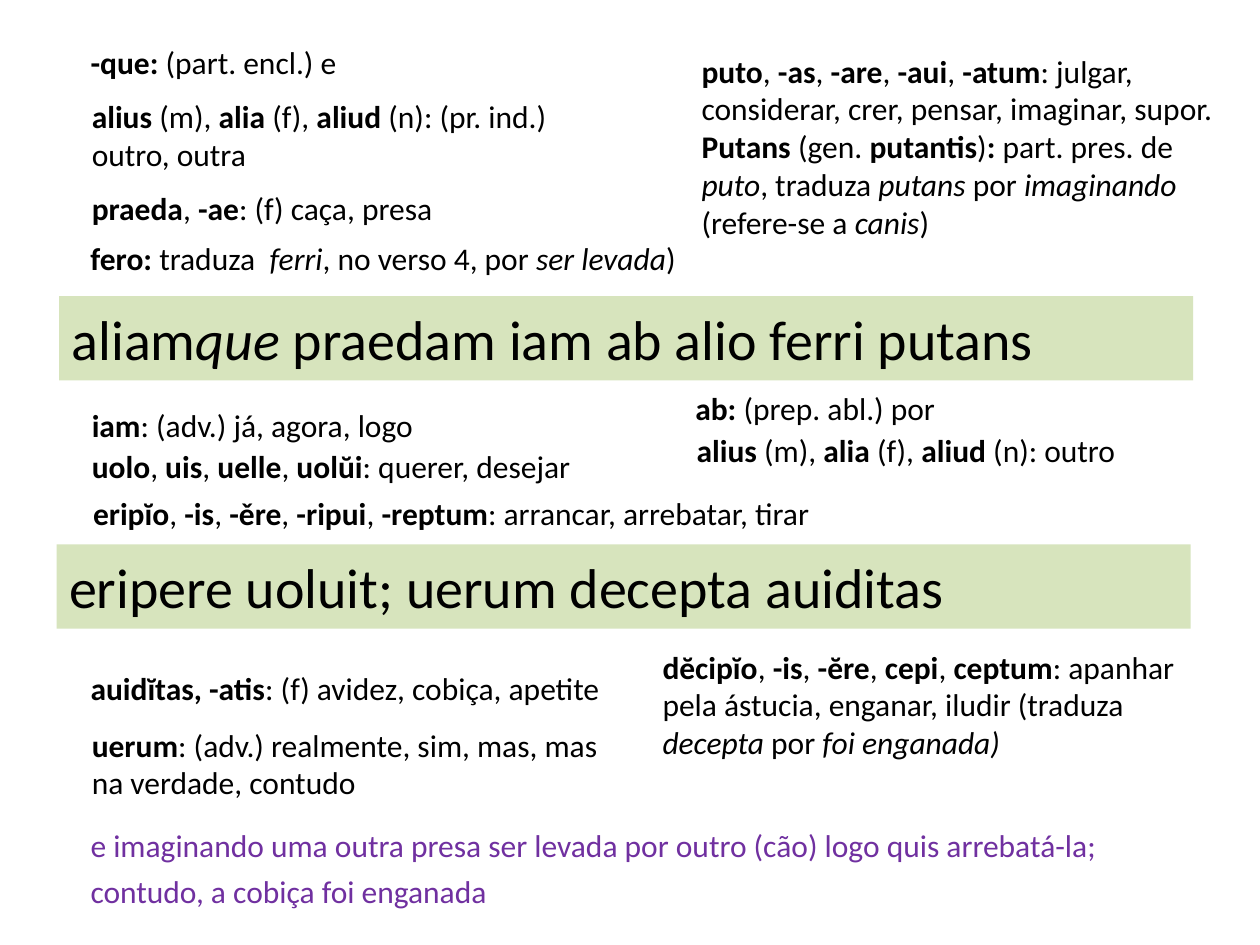
from pptx import Presentation
from pptx.dml.color import RGBColor
from pptx.enum.shapes import MSO_SHAPE
from pptx.enum.text import MSO_ANCHOR, MSO_AUTO_SIZE, PP_ALIGN
from pptx.util import Inches, Pt

BLACK = RGBColor(0x00, 0x00, 0x00)
GREEN = RGBColor(0xD7, 0xE4, 0xBD)
PURPLE = RGBColor(0x70, 0x30, 0xA0)
FONT = "Calibri"

# Left, top, text; *bold* and _italic_
VERSES = [
    (0.47, 2.35, "aliam_que _praedam iam ab alio ferri putans"),
    (0.45, 4.32, "eripere uoluit; uerum decepta auiditas"),
]

# Left, top, width, height, paragraphs
NOTES = [
    (0.62, 0.29, 2.28, 0.4, ["*-que:* (part. encl.) e"]),
    (0.63, 0.72, 4.38, 0.71,
     ["*alius* (m), *alia* (f), *aliud* (n): (pr. ind.) outro, outra"]),
    (0.63, 1.45, 4.38, 0.4, ["*praeda*, *-ae*: (f) caça, presa"]),
    (0.62, 1.85, 4.86, 0.4,
     ["*fero:* traduza  _ferri_, no verso 4, por _ser levada_)"]),
    (5.47, 0.36, 4.33, 1.62,
     ["*puto*, *-as*, *-are*, *-aui*, *-atum*: julgar, considerar, crer, "
      "pensar, imaginar, supor.",
      "*Putans *(gen. *putantis*)*:* part. pres. de _puto_, traduza "
      "_putans _por _imaginando _(refere-se a _canis_)"]),
    (0.63, 3.17, 4.18, 0.4, ["*iam*: (adv.) já, agora, logo"]),
    (0.63, 3.5, 4.18, 0.4,
     ["*uolo*, *uis*, *uelle*, *uolŭi*: querer, desejar"]),
    (0.64, 3.87, 6.56, 0.4,
     ["*eripĭo*, *-is*, *-ěre*, *-ripui*, *-reptum*: arrancar, arrebatar, "
      "tirar"]),
    (5.42, 3.04, 4.38, 0.4, ["*ab: *(prep. abl.) por"]),
    (5.43, 3.37, 4.38, 0.4, ["*alius* (m), *alia* (f), *aliud* (n): outro"]),
    (0.62, 5.26, 4.38, 0.4, ["*auidĭtas, -atis*: (f) avidez, cobiça, apetite"]),
    (0.63, 5.71, 4.38, 0.71,
     ["*uerum*: (adv.) realmente, sim, mas, mas na verdade, contudo"]),
    (5.16, 5.09, 4.38, 1.01,
     ["*dĕcipĭo*, *-is*, *-ĕre*, *cepi*, *ceptum*: apanhar pela ástucia, "
      "enganar, iludir (traduza _decepta_ por _foi enganada)_"]),
]

GLOSS = [
    (0.62, 6.51, 8.98, 0.4,
     ["e imaginando uma outra presa ser levada por outro (cão) logo quis "
      "arrebatá-la;"]),
    (0.62, 6.87, 8.98, 0.4, ["contudo, a cobiça foi enganada"]),
]


def add_runs(para, text, size, color):
    """Split *bold* and _italic_ marks into runs."""
    para.alignment = PP_ALIGN.LEFT
    for i, chunk in enumerate(text.split("*")):
        for j, part in enumerate(chunk.split("_")):
            if not part:
                continue
            run = para.add_run()
            run.text = part
            font = run.font
            font.name = FONT
            font.size = Pt(size)
            font.bold = i % 2 == 1
            font.italic = j % 2 == 1
            font.color.rgb = color


def add_verse(slide, left, top, text):
    bar = slide.shapes.add_shape(
        MSO_SHAPE.RECTANGLE, Inches(left), Inches(top), Inches(9), Inches(0.67))
    bar.shadow.inherit = False
    bar.fill.solid()
    bar.fill.fore_color.rgb = GREEN
    bar.line.fill.background()
    frame = bar.text_frame
    frame.word_wrap = True
    frame.vertical_anchor = MSO_ANCHOR.MIDDLE
    add_runs(frame.paragraphs[0], text, 32, BLACK)


def add_note(slide, left, top, width, height, texts, color):
    box = slide.shapes.add_textbox(
        Inches(left), Inches(top), Inches(width), Inches(height))
    frame = box.text_frame
    frame.word_wrap = True
    frame.auto_size = MSO_AUTO_SIZE.SHAPE_TO_FIT_TEXT
    for i, text in enumerate(texts):
        para = frame.add_paragraph() if i else frame.paragraphs[0]
        add_runs(para, text, 18, color)


def main():
    deck = Presentation()
    deck.slide_width = Inches(10)
    deck.slide_height = Inches(7.5)
    slide = deck.slides.add_slide(deck.slide_layouts[6])
    for verse in VERSES:
        add_verse(slide, *verse)
    for note in NOTES:
        add_note(slide, *note, BLACK)
    for line in GLOSS:
        add_note(slide, *line, PURPLE)
    deck.save("out.pptx")


if __name__ == "__main__":
    main()
